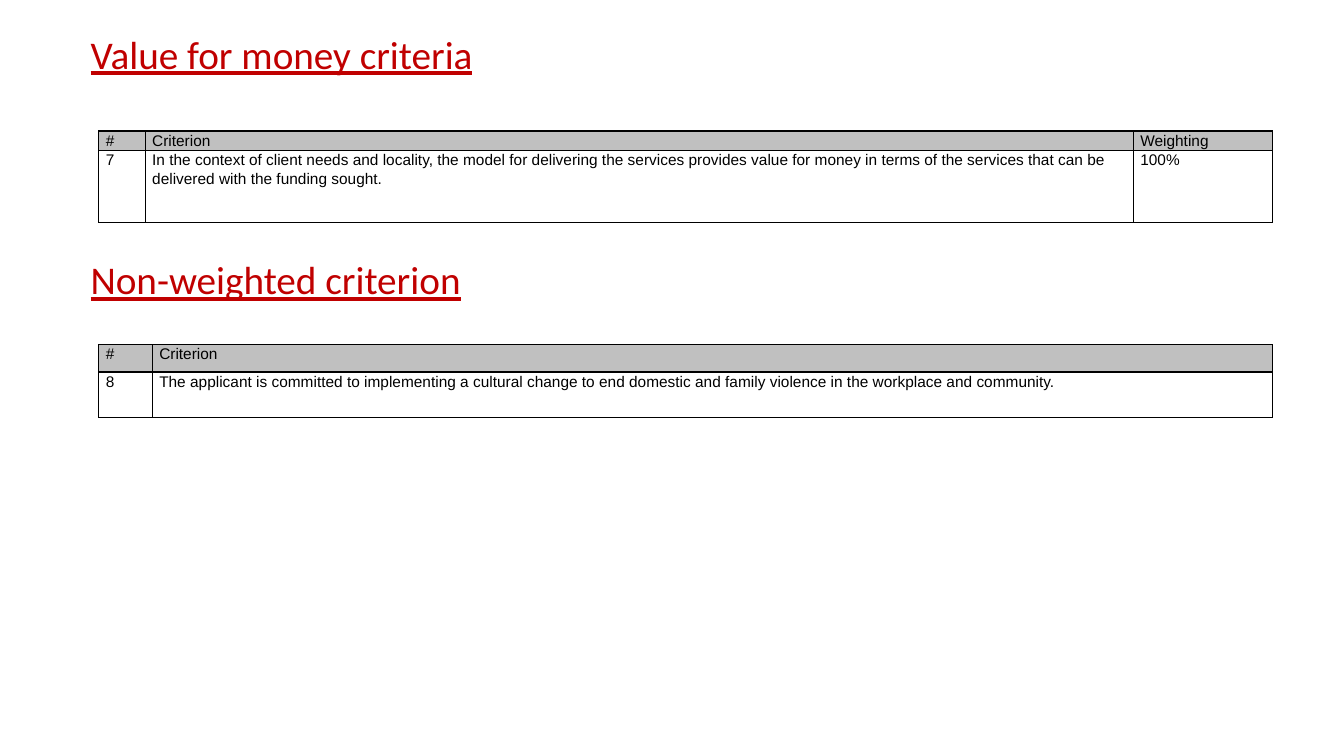
from dataclasses import dataclass

from lxml import etree
from pptx import Presentation
from pptx.dml.color import RGBColor
from pptx.oxml.ns import qn
from pptx.util import Inches, Pt

BORDER_SIDES = ("a:lnL", "a:lnR", "a:lnT", "a:lnB")


@dataclass(frozen=True)
class Theme:
    heading_font: str = "Calibri"
    table_font: str = "Arial"
    heading_size: int = 28
    table_size: int = 11
    heading_color: str = "C00000"
    table_color: str = "000000"
    header_fill: str = "C0C0C0"
    border_width: int = 1


def apply_format(target, values):
    for name, value in values.items():
        setattr(target, name, value)


class CriteriaSlide:
    def __init__(self, presentation, theme):
        self.theme = theme
        self.slide = presentation.slides.add_slide(presentation.slide_layouts[6])

    def add_headings(self, left, top, width, height, headings):
        box = self.slide.shapes.add_textbox(
            Inches(left), Inches(top), Inches(width), Inches(height))
        frame = box.text_frame
        frame.word_wrap = True
        frame.text = "\n".join(text for text, _ in headings)
        for paragraph, (_, space_before) in zip(frame.paragraphs, headings):
            apply_format(paragraph, {"line_spacing": 0.9, "space_before": Pt(space_before)})
            font = paragraph.runs[0].font
            apply_format(font, {"name": self.theme.heading_font,
                                "size": Pt(self.theme.heading_size), "underline": True})
            font.color.rgb = RGBColor.from_string(self.theme.heading_color)

    def add_criteria_table(self, left, top, column_widths, row_heights, rows):
        table = self.slide.shapes.add_table(
            len(rows), len(column_widths), Inches(left), Inches(top),
            Inches(sum(column_widths)), Inches(sum(row_heights))).table
        apply_format(table, {"first_row": False, "horz_banding": False})
        for column, width in zip(table.columns, column_widths):
            column.width = Inches(width)
        for row, height in zip(table.rows, row_heights):
            row.height = Inches(height)
        for row_index, texts in enumerate(rows):
            for column_index, text in enumerate(texts):
                self.style_cell(table.cell(row_index, column_index), text, row_index == 0)

    def style_cell(self, cell, text, is_header):
        cell.text = text
        apply_format(cell, {"margin_left": Inches(0.07), "margin_right": Inches(0.07),
                            "margin_top": 0, "margin_bottom": 0})
        paragraph = cell.text_frame.paragraphs[0]
        apply_format(paragraph, {"line_spacing": 1.07, "space_before": Pt(3),
                                 "space_after": Pt(3)})
        font = paragraph.runs[0].font
        apply_format(font, {"name": self.theme.table_font, "size": Pt(self.theme.table_size)})
        font.color.rgb = RGBColor.from_string(self.theme.table_color)
        if is_header:
            cell.fill.solid()
            cell.fill.fore_color.rgb = RGBColor.from_string(self.theme.header_fill)
        else:
            cell.fill.background()
        self.add_borders(cell)

    def add_borders(self, cell):
        properties = cell._tc.get_or_add_tcPr()
        for position, side in enumerate(BORDER_SIDES):
            border = etree.Element(qn(side), w=str(Pt(self.theme.border_width)))
            fill = etree.SubElement(border, qn("a:solidFill"))
            etree.SubElement(fill, qn("a:srgbClr"), val=self.theme.table_color)
            properties.insert(position, border)


def main():
    presentation = Presentation()
    apply_format(presentation, {"slide_width": Inches(13.33), "slide_height": Inches(7.5)})
    criteria = CriteriaSlide(presentation, Theme())
    criteria.add_headings(0.8, 0.3, 11.5, 6.25, [
        ("Value for money criteria", 10),
        ("Non-weighted criterion", 131),
    ])
    criteria.add_criteria_table(0.98, 1.3, [0.46, 9.8, 1.38], [0.18, 0.71], [
        ("#", "Criterion", "Weighting"),
        ("7", "In the context of client needs and locality, the model for delivering the "
              "services provides value for money in terms of the services that can be "
              "delivered with the funding sought.", "100%"),
    ])
    criteria.add_criteria_table(0.98, 3.42, [0.53, 11.11], [0.27, 0.45], [
        ("#", "Criterion"),
        ("8", "The applicant is committed to implementing a cultural change to end domestic "
              "and family violence in the workplace and community."),
    ])
    presentation.save("out.pptx")


if __name__ == "__main__":
    main()
